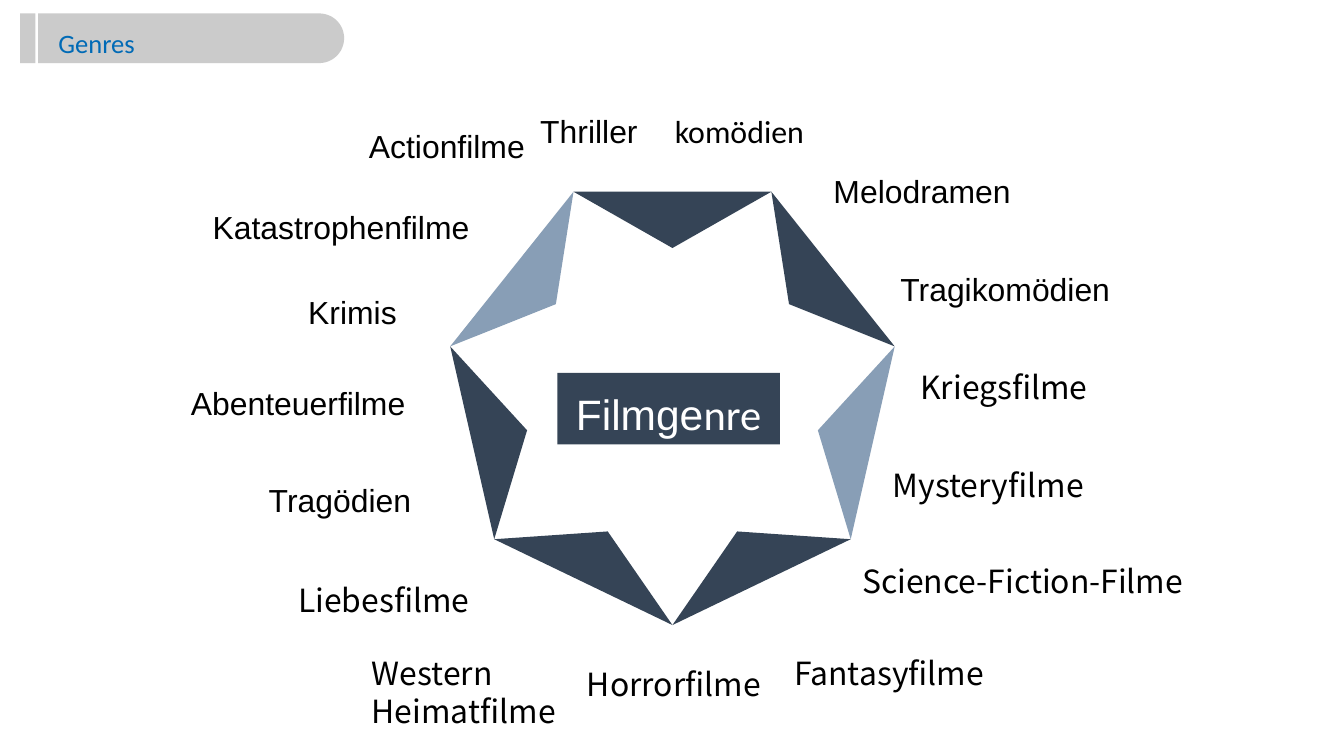
from dataclasses import dataclass
from math import cos, pi, sin

from lxml import etree
from pptx import Presentation, util as u
from pptx.dml import color
from pptx.enum import shapes, text
from pptx.oxml import ns


@dataclass(frozen=True)
class Theme:
    dark: str = "354456"
    light: str = "889EB6"
    tab: str = "BFBFBF"
    title: str = "006AB6"
    ink: str = "000000"
    paper: str = "FFFFFF"
    sans: str = "Arial"
    head: str = "Calibri"
    wide: str = "Noto Sans CJK SC"
    small: int = 20
    body: int = 24
    large: int = 32


class Deck:
    """Draws styled elements on a slide, on a grid of 140.6 columns by 79.1 rows."""

    def __init__(self, theme, cols=140.6, rows=79.1):
        self.t = theme
        self.prs = Presentation()
        self.prs.slide_width, self.prs.slide_height = self.at(cols), self.at(rows)
        self.s = self.prs.slides.add_slide(self.prs.slide_layouts[6])

    def at(self, cells):
        return u.Inches(cells / 10)

    def fill(self, sp, rgb, opacity=100):
        sp.shadow.inherit = False
        sp.fill.solid()
        sp.fill.fore_color.rgb = color.RGBColor.from_string(rgb)
        sp.line.fill.background()
        if opacity < 100:
            clr = sp._element.spPr.find(".//" + ns.qn("a:srgbClr"))
            etree.SubElement(clr, ns.qn("a:alpha"), val=str(opacity * 1000))
        return sp

    def set_text(self, sp, *parts, size=None, rgb=None, align="LEFT", spacing=1.0):
        p = sp.text_frame.paragraphs[0]
        p.alignment = getattr(text.PP_ALIGN, align)
        p.line_spacing = spacing
        for words, font in parts:
            for i, line in enumerate(words.split("\n")):
                if i:
                    p.add_line_break()
                r = p.add_run()
                r.text = line
                r.font.name = font
                r.font.size = u.Pt(size or self.t.body)
                r.font.color.rgb = color.RGBColor.from_string(rgb or self.t.ink)

    def shape(self, kind, *box, rgb, opacity=100, rotation=0):
        sp = self.s.shapes.add_shape(kind, *map(self.at, box))
        sp.rotation = rotation
        return self.fill(sp, rgb, opacity)

    def label(self, words, *box, font, inset=(1, 0.5), **style):
        sp = self.s.shapes.add_textbox(*map(self.at, box))
        tf = sp.text_frame
        tf.word_wrap = True
        tf.auto_size = text.MSO_AUTO_SIZE.SHAPE_TO_FIT_TEXT
        tf.margin_left = tf.margin_right = self.at(inset[0])
        tf.margin_top = tf.margin_bottom = self.at(inset[1])
        self.set_text(sp, (words, font), **style)

    def ring(self, x, y, outer, inner, fills):
        group = self.s.shapes.add_group_shape()
        half = pi / len(fills)

        def point(radius, angle):
            return self.at(x + radius * sin(angle)), self.at(y - radius * cos(angle))

        for i, rgb in enumerate(fills):
            mid = 2 * half * i
            start = point(outer, mid - half)
            fb = group.shapes.build_freeform(*start, scale=1.0)
            fb.add_line_segments([point(outer, mid + half), point(inner, mid)])
            self.fill(fb.convert_to_shape(), rgb)


def main():
    t = Theme()
    d = Deck(t)
    kinds = shapes.MSO_SHAPE

    d.ring(70.35, 41.55, 23.85, 15.6,
           [t.dark, t.dark, t.light, t.dark, t.dark, t.dark, t.light])
    sp = d.shape(kinds.RECTANGLE, 58.3, 39, 23.3, 7.5, rgb=t.dark)
    d.set_text(sp, ("Filmge", t.sans), ("nre", t.head),
               size=t.large, rgb=t.paper, align="CENTER", spacing=1.2)

    tab = d.shape(kinds.ROUND_2_SAME_RECTANGLE, 17.4, -12, 5.2, 32,
                  rgb=t.tab, opacity=80, rotation=90)
    tab.adjustments[0] = 0.5
    d.shape(kinds.RECTANGLE, 2.1, 1.4, 1.6, 5.2, rgb=t.tab, opacity=80)
    d.label("Genres", 5.4, 1.8, 31.1, 4.8, font=t.head, inset=(0.7, 0.4),
            size=t.small, rgb=t.title, spacing=1.2)

    upper = [
        ("Thriller", 41.2, 10.4, 26.6, "RIGHT", t.sans),
        ("Actionfilme", 29.4, 12, 26.6, "RIGHT", t.sans),
        ("Katastrophenfilme", 18.3, 20.4, 31.9, "RIGHT", t.sans),
        ("Krimis", 16, 29.3, 26.6, "RIGHT", t.sans),
        ("Abenteuerfilme", 18.1, 38.8, 25.4, "RIGHT", t.sans),
        ("Tragödien", 17.5, 49, 26.6, "RIGHT", t.sans),
        ("komödien", 69.5, 10.4, 26.6, "LEFT", t.head),
        ("Melodramen", 86.1, 16.7, 26.6, "LEFT", t.sans),
        ("Tragikomödien", 93.1, 26.9, 26.6, "LEFT", t.sans),
    ]
    for words, x, y, w, align, font in upper:
        d.label(words, x, y, w, 5.9, font=font, inset=(1.1, 0.5),
                align=align, spacing=1.2)

    lower = [
        ("Kriegsfilme", 95.3, 38, 21.2, 5),
        ("Mysteryfilme", 92.4, 48.2, 23.3, 5),
        ("Science-Fiction-Filme", 89.2, 58.3, 42.1, 5),
        ("Fantasyfilme", 82.1, 67.9, 29.5, 5),
        ("Horrorfilme", 60.4, 69.1, 20.9, 5),
        ("Western\nHeimatfilme", 37.9, 67.9, 21.5, 9.1),
        ("Liebesfilme", 30.2, 60.3, 21.6, 5),
    ]
    for words, *box in lower:
        d.label(words, *box, font=t.wide)

    d.prs.save("out.pptx")


if __name__ == "__main__":
    main()
